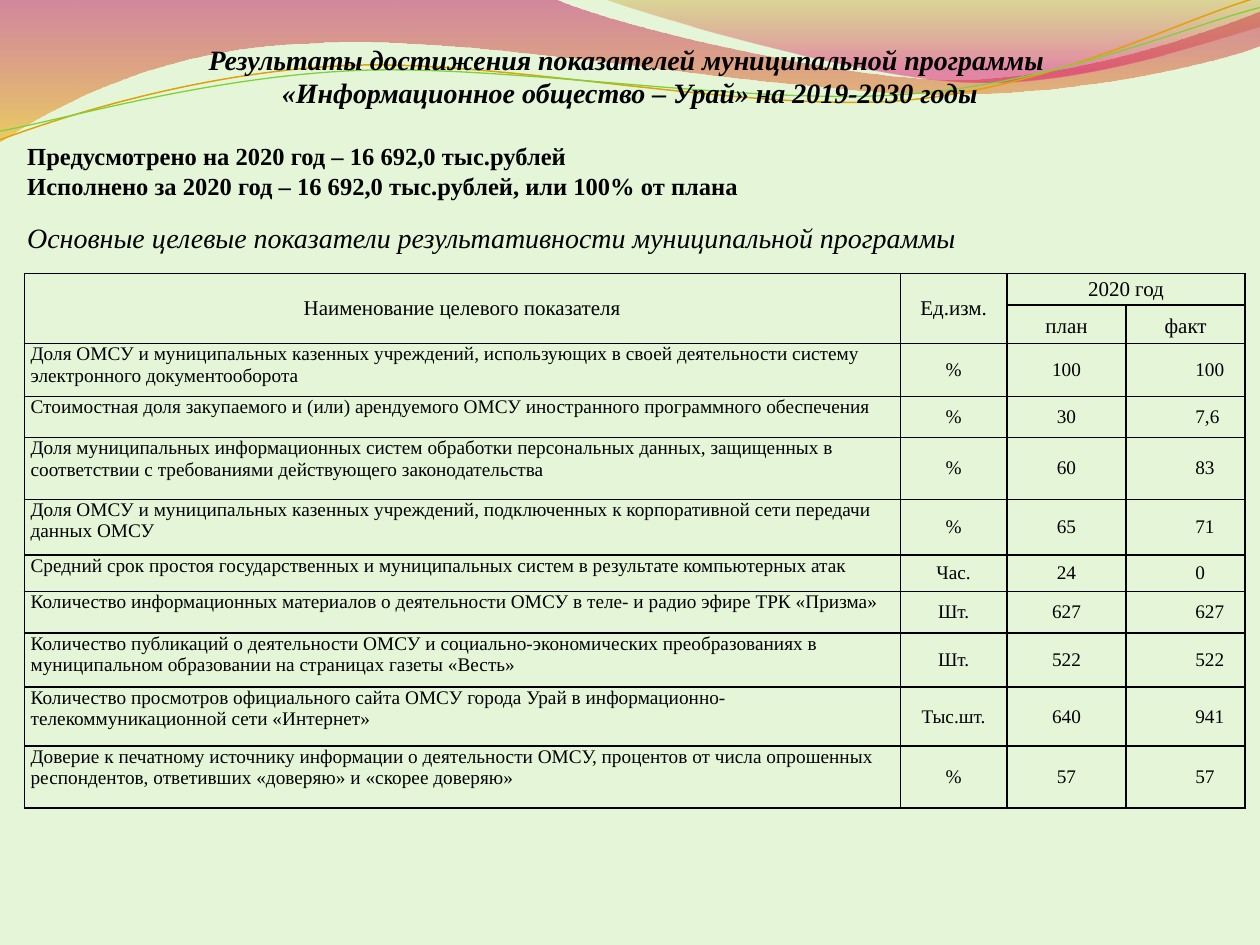
from dataclasses import dataclass
from math import cos, radians, sin
from typing import Optional

from lxml.etree import SubElement
from pptx import Presentation
from pptx.dml.color import RGBColor
from pptx.enum.text import MSO_ANCHOR, MSO_AUTO_SIZE, PP_ALIGN
from pptx.oxml.ns import qn
from pptx.util import Pt

BACKGROUND = RGBColor(0xE5, 0xF6, 0xD8)
BLACK = RGBColor(0, 0, 0)
CRIMSON = RGBColor(0xBD, 0x00, 0x59)
AMBER = RGBColor(0xF0, 0xAB, 0x00)
OCHRE = RGBColor(0xC3, 0x8B, 0x00)
PINK = RGBColor(0xE1, 0x00, 0x6B)
ORANGE = RGBColor(0xE0, 0xA2, 0x09)
GREEN = RGBColor(0x7F, 0xD1, 0x3B)
FONT = "Times New Roman"
LINE_TILT = -2.7


@dataclass
class GradientStop:
    position: float
    color: RGBColor
    opacity: int


@dataclass
class Wave:
    """Segments hold one point for a straight line, three for a Bézier curve."""
    start: tuple
    segments: list
    stops: tuple = ()
    line_color: Optional[RGBColor] = None
    line_width: float = 0
    center: tuple = (0, 0)


@dataclass
class TextBlock:
    left: float
    top: float
    width: float
    height: float
    size: float
    lines: list
    bold: bool = False
    italic: bool = False
    align: PP_ALIGN = PP_ALIGN.LEFT


@dataclass
class Indicator:
    height: float
    name: str
    unit: str
    plan: str
    fact: str
    name_space: float = 0
    unit_space: float = 0
    plan_space: float = 0


WAVES = [
    Wave((0, 0), [
        [(316.8, -0.7)],
        [(342.7, 12.2), (478.1, 45.4), (545.8, 45.4)],
        [(614.2, 45.4), (689.8, 18.7), (720, 6.5)],
        [(720.7, 25.9)],
        [(707.8, 31.7), (626.4, 54.7), (537.1, 54)],
        [(447.8, 54), (275, 20.2), (185, 24.5)],
        [(92.9, 25.9), (33.1, 59.8), (-0.7, 81.4)],
        [(0, 0)],
    ], stops=(GradientStop(0, CRIMSON, 45), GradientStop(1, AMBER, 55))),
    Wave((344.9, -0.7), [
        [(366.5, 7.9), (491, 44.6), (553.7, 46.8)],
        [(616.3, 49.7), (691.9, 23), (720, 15.1)],
        [(720, 0)],
        [(344.9, -0.7)],
    ], stops=(GradientStop(0, OCHRE, 30), GradientStop(0.8, PINK, 45))),
    Wave((0, 79.9), [
        [(34.6, 67), (113.8, 41), (199.4, 37.4)],
        [(284.4, 33.8), (427, 64.1), (513.4, 57.6)],
        [(599.8, 51.1), (675.4, 10.8), (718.6, -1.4)],
    ], line_color=ORANGE, line_width=0.85, center=(359.3, 41.4)),
    Wave((0, 74.9), [
        [(33.8, 69.1), (118.1, 43.9), (203.8, 40.3)],
        [(290.2, 36.7), (429.8, 60.5), (516.2, 54)],
        [(601.9, 48.2), (677.5, 15.1), (720, 4.3)],
    ], line_color=GREEN, line_width=0.75, center=(359.6, 42.5)),
]

TITLE = TextBlock(8.6, 20.7, 702.7, 46, 16, [
    "Результаты достижения показателей муниципальной программы ",
    "«Информационное общество – Урай» на 2019-2030 годы",
], bold=True, italic=True, align=PP_ALIGN.CENTER)
BUDGET = TextBlock(8.5, 77.2, 453.6, 41, 14, [
    "Предусмотрено на 2020 год – 16 692,0 тыс.рублей",
    "Исполнено за 2020 год – 16 692,0 тыс.рублей, или 100% от плана",
], bold=True)
SUBTITLE = TextBlock(8.5, 122.4, 674.6, 26.6, 16, [
    "Основные целевые показатели результативности муниципальной программы",
], italic=True)

COLUMN_WIDTHS = [500.6, 60.9, 68.1, 68.1]
HEADER_HEIGHTS = [17.8, 22.2]
INDICATORS = [
    Indicator(30.1, "Доля ОМСУ и муниципальных казенных учреждений, использующих в своей деятельности "
              "систему электронного документооборота", "%", "100", "100", unit_space=6, plan_space=6),
    Indicator(23.6, "Стоимостная доля закупаемого и (или) арендуемого ОМСУ иностранного программного "
              "обеспечения", "%", "30", "7,6", unit_space=6, plan_space=6),
    Indicator(35.3, "Доля муниципальных информационных систем обработки персональных данных, защищенных в "
              "соответствии с требованиями действующего законодательства", "%", "60", "83", 5, 5, 6),
    Indicator(31.9, "Доля ОМСУ и муниципальных казенных учреждений, подключенных к корпоративной сети "
              "передачи данных ОМСУ", "%", "65", "71"),
    Indicator(20.7, "Средний срок простоя государственных и муниципальных систем в результате "
              "компьютерных атак", "Час.", "24", "0"),
    Indicator(23.8, "Количество информационных материалов о деятельности ОМСУ в теле- и радио эфире "
              "ТРК «Призма»", "Шт.", "627", "627"),
    Indicator(30.9, "Количество публикаций о деятельности ОМСУ и социально-экономических преобразованиях в "
              "муниципальном образовании на страницах газеты «Весть»", "Шт.", "522", "522"),
    Indicator(33.8, "Количество просмотров официального сайта ОМСУ города Урай в "
              "информационно-телекоммуникационной сети «Интернет»", "Тыс.шт.", "640", "941", unit_space=6),
    Indicator(35.3, "Доверие к печатному источнику информации о деятельности ОМСУ, процентов от числа "
              "опрошенных респондентов, ответивших «доверяю» и «скорее доверяю»", "%", "57", "57",
              unit_space=6),
]


def rotate(point: tuple, center: tuple, degrees: float) -> tuple:
    angle = radians(degrees)
    x, y = point[0] - center[0], point[1] - center[1]
    return center[0] + x * cos(angle) - y * sin(angle), center[1] + x * sin(angle) + y * cos(angle)


def draw_wave(slide, wave: Wave) -> None:
    tilt = 0 if wave.stops else LINE_TILT
    points = [wave.start] + [point for segment in wave.segments for point in segment]
    vertices = [(Pt(x), Pt(y)) for x, y in (rotate(point, wave.center, -tilt) for point in points)]
    builder = slide.shapes.build_freeform(*vertices[0])
    builder.add_line_segments(vertices[1:], close=bool(wave.stops))
    shape = builder.convert_to_shape()
    shape.rotation = tilt
    shape.shadow.inherit = False
    # Join each three line steps of a curved segment into one Bézier step
    steps = iter(list(shape._element.iter(qn("a:lnTo"))))
    for segment in wave.segments:
        first, *others = [next(steps) for _ in segment]
        if others:
            first.tag = qn("a:cubicBezTo")
        for step in others:
            first.append(step[0])
            step.getparent().remove(step)
    if not wave.stops:
        shape.fill.background()
        shape.line.color.rgb = wave.line_color
        shape.line.width = Pt(wave.line_width)
        return
    shape.line.fill.background()
    shape.fill.gradient()
    shape.fill.gradient_angle = 270
    for target, stop in zip(shape.fill.gradient_stops, wave.stops):
        target.position = stop.position
        target.color.rgb = stop.color
    for color, stop in zip(shape._element.spPr.iter(qn("a:srgbClr")), wave.stops):
        SubElement(color, qn("a:alpha"), val=str(stop.opacity * 1000))


def style_font(paragraph, size: float, bold: bool = False, italic: bool = False) -> None:
    font = paragraph.font
    font.name, font.size, font.bold, font.italic = FONT, Pt(size), bold, italic
    font.color.rgb = BLACK


def draw_text(slide, block: TextBlock) -> None:
    shape = slide.shapes.add_textbox(Pt(block.left), Pt(block.top), Pt(block.width), Pt(block.height))
    shape.text_frame.word_wrap = True
    shape.text_frame.auto_size = MSO_AUTO_SIZE.SHAPE_TO_FIT_TEXT
    shape.text_frame.text = "\n".join(block.lines)
    for paragraph in shape.text_frame.paragraphs:
        paragraph.alignment = block.align
        style_font(paragraph, block.size, block.bold, block.italic)


def fill_cell(cell, text: str, size: float, align=PP_ALIGN.CENTER, anchor=MSO_ANCHOR.MIDDLE,
              margin: float = 3.6, space: float = 0):
    cell.text = text
    cell.vertical_anchor = anchor
    cell.margin_left = cell.margin_right = Pt(margin)
    cell.margin_top = cell.margin_bottom = 0
    paragraph = cell.text_frame.paragraphs[0]
    paragraph.alignment = align
    paragraph.space_before = Pt(space)
    style_font(paragraph, size)
    # Borders come before the fill in the cell properties
    properties = cell._tc.get_or_add_tcPr()
    for side in ("lnL", "lnR", "lnT", "lnB"):
        border = SubElement(properties, qn(f"a:{side}"), w=str(Pt(1)))
        SubElement(SubElement(border, qn("a:solidFill")), qn("a:srgbClr"), val=str(BLACK))
    cell.fill.background()
    return paragraph


def draw_table(slide) -> None:
    heights = HEADER_HEIGHTS + [indicator.height for indicator in INDICATORS]
    table = slide.shapes.add_table(len(heights), len(COLUMN_WIDTHS), Pt(13.9), Pt(156.4),
                                   Pt(sum(COLUMN_WIDTHS)), Pt(sum(heights))).table
    table.first_row = table.horz_banding = False
    for column, width in zip(table.columns, COLUMN_WIDTHS):
        column.width = Pt(width)
    for row, height in zip(table.rows, heights):
        row.height = Pt(height)
    # Two-level header
    for column, text in enumerate(["Наименование целевого показателя", "Ед.изм.", "2020 год", ""]):
        fill_cell(table.cell(0, column), text, 12, margin=5)
    for column, text in enumerate(["", "", "план", "факт"]):
        fill_cell(table.cell(1, column), text, 12).line_spacing = 1.15 if text else 1
    for first, last in [((0, 0), (1, 0)), ((0, 1), (1, 1)), ((0, 2), (0, 3))]:
        table.cell(*first).merge(table.cell(*last))
    # Indicator rows
    for row, item in enumerate(INDICATORS, len(HEADER_HEIGHTS)):
        fill_cell(table.cell(row, 0), item.name, 11, PP_ALIGN.LEFT, MSO_ANCHOR.TOP, space=item.name_space)
        fill_cell(table.cell(row, 1), item.unit, 11, space=item.unit_space)
        fill_cell(table.cell(row, 2), item.plan, 11, space=item.plan_space)
        fact = fill_cell(table.cell(row, 3), item.fact, 11, PP_ALIGN.LEFT)
        fact._p.get_or_add_pPr().set("indent", str(Pt(36)))


def main() -> None:
    presentation = Presentation()
    presentation.slide_width, presentation.slide_height = Pt(720), Pt(540)
    slide = presentation.slides.add_slide(presentation.slide_layouts[6])
    slide.background.fill.solid()
    slide.background.fill.fore_color.rgb = BACKGROUND
    for wave in WAVES:
        draw_wave(slide, wave)
    draw_text(slide, TITLE)
    draw_table(slide)
    draw_text(slide, BUDGET)
    draw_text(slide, SUBTITLE)
    presentation.save("out.pptx")


if __name__ == "__main__":
    main()
